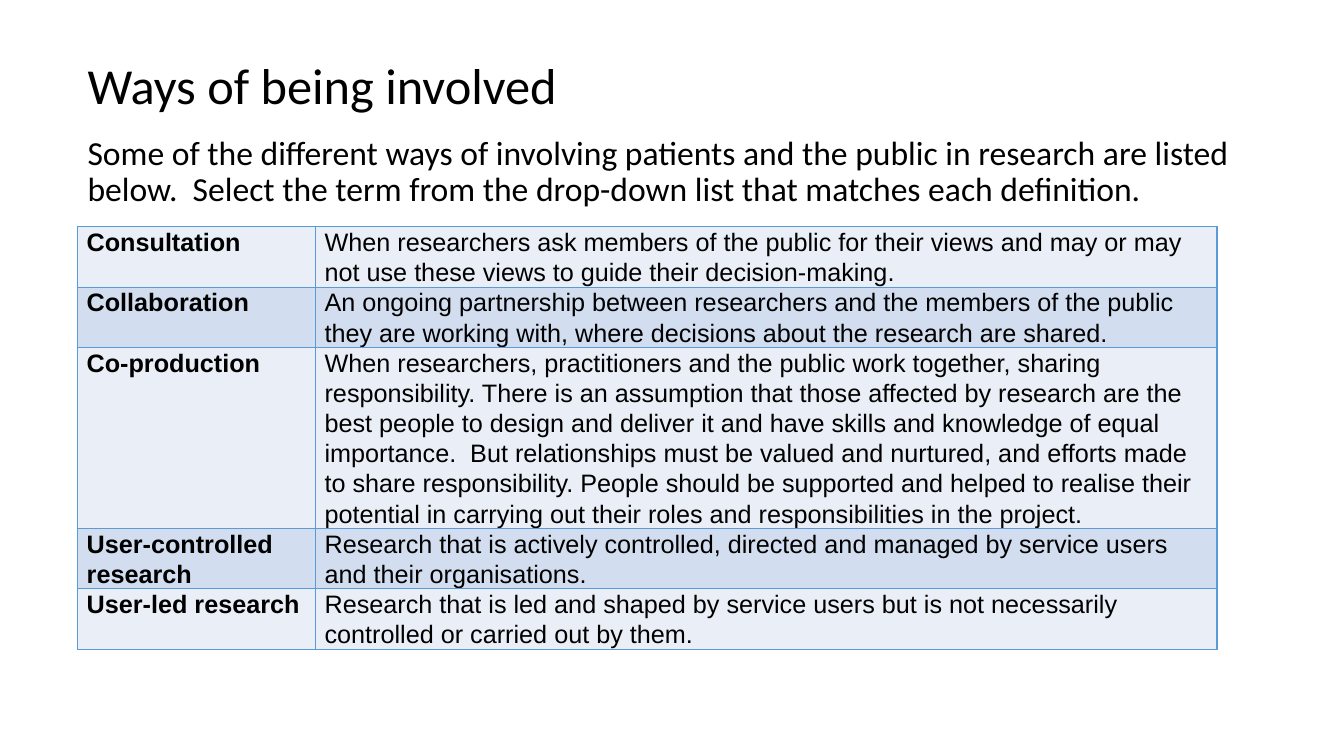
from lxml.etree import SubElement
from pptx import Presentation
from pptx.dml.color import RGBColor
from pptx.enum.text import MSO_ANCHOR, PP_ALIGN
from pptx.oxml.ns import qn
from pptx.util import Inches, Pt

BLACK = "000000"
BORDER = "5B9BD5"
BANDS = ("EAEFF7", "D2DEEF")
COLUMN_WIDTHS = (2.36, 8.94)
LINE_HEIGHT = 0.295
TITLE = "Ways of being involved"
INSTRUCTION = (
    "Some of the different ways of involving patients and the public in research "
    "are listed below.  Select the term from the drop-down list that matches each definition."
)
DEFINITIONS = (
    ("Consultation", 2,
     "When researchers ask members of the public for their views and may or may not "
     "use these views to guide their decision-making."),
    ("Collaboration", 2,
     "An ongoing partnership between researchers and the members of the public they "
     "are working with, where decisions about the research are shared."),
    ("Co-production", 6,
     "When researchers, practitioners and the public work together, sharing "
     "responsibility. There is an assumption that those affected by research are the "
     "best people to design and deliver it and have skills and knowledge of equal "
     "importance.  But relationships must be valued and nurtured, and efforts made to "
     "share responsibility. People should be supported and helped to realise their "
     "potential in carrying out their roles and responsibilities in the project."),
    ("User-controlled research", 2,
     "Research that is actively controlled, directed and managed by service users "
     "and their organisations."),
    ("User-led research", 2,
     "Research that is led and shaped by service users but is not necessarily "
     "controlled or carried out by them."),
)


def color(value):
    """Turn a hex string into a colour."""
    return RGBColor.from_string(value)


def add_run(paragraph, text, face, size, bold=False):
    """Add one formatted run to a paragraph."""
    run = paragraph.add_run()
    run.text = text
    run.font.name = face
    run.font.size = Pt(size)
    run.font.bold = bold
    run.font.color.rgb = color(BLACK)


def add_text(slide, text, left, top, width, height, size, anchor):
    """Add a wrapped text box holding one paragraph."""
    box = slide.shapes.add_textbox(Inches(left), Inches(top), Inches(width), Inches(height))
    frame = box.text_frame
    frame.word_wrap = True
    frame.vertical_anchor = anchor
    paragraph = frame.paragraphs[0]
    paragraph.alignment = PP_ALIGN.LEFT
    paragraph.line_spacing = 0.9
    add_run(paragraph, text, "Calibri", size)


def add_borders(cell):
    """Draw a thin line on all four sides of a cell."""
    properties = cell._tc.get_or_add_tcPr()
    for position, side in enumerate(("lnL", "lnR", "lnT", "lnB")):
        line = SubElement(properties, qn(f"a:{side}"), w=str(Pt(1)))
        fill = SubElement(line, qn("a:solidFill"))
        SubElement(fill, qn("a:srgbClr"), val=BORDER)
        properties.insert(position, line)


def fill_cell(cell, text, band, bold):
    """Write and style one table cell."""
    cell.margin_left = cell.margin_right = Inches(0.07)
    cell.margin_top = cell.margin_bottom = 0
    cell.vertical_anchor = MSO_ANCHOR.TOP
    cell.fill.solid()
    cell.fill.fore_color.rgb = color(band)
    add_borders(cell)
    paragraph = cell.text_frame.paragraphs[0]
    paragraph.line_spacing = 1.07
    paragraph._p.get_or_add_pPr().set("marL", str(Inches(0.02)))
    add_run(paragraph, text, "Arial", 18, bold)


def add_definitions(slide, left, top):
    """Add the table of terms and their definitions."""
    height = LINE_HEIGHT * sum(lines for _, lines, _ in DEFINITIONS)
    table = slide.shapes.add_table(
        len(DEFINITIONS), len(COLUMN_WIDTHS), Inches(left), Inches(top),
        Inches(sum(COLUMN_WIDTHS)), Inches(height),
    ).table
    table.first_row = False
    for column, width in zip(table.columns, COLUMN_WIDTHS):
        column.width = Inches(width)
    for index, (term, lines, definition) in enumerate(DEFINITIONS):
        table.rows[index].height = Inches(LINE_HEIGHT * lines)
        band = BANDS[index % 2]
        fill_cell(table.cell(index, 0), term, band, True)
        fill_cell(table.cell(index, 1), definition, band, False)


def main():
    """Build and save the slide."""
    presentation = Presentation()
    presentation.slide_width = Inches(13.33)
    presentation.slide_height = Inches(7.5)
    slide = presentation.slides.add_slide(presentation.slide_layouts[6])
    add_definitions(slide, 0.77, 2.25)
    add_text(slide, INSTRUCTION, 0.77, 1.3, 11.81, 5.48, 24, MSO_ANCHOR.TOP)
    add_text(slide, TITLE, 0.77, 0.19, 12.22, 1.37, 36, MSO_ANCHOR.MIDDLE)
    presentation.save("out.pptx")


if __name__ == "__main__":
    main()
